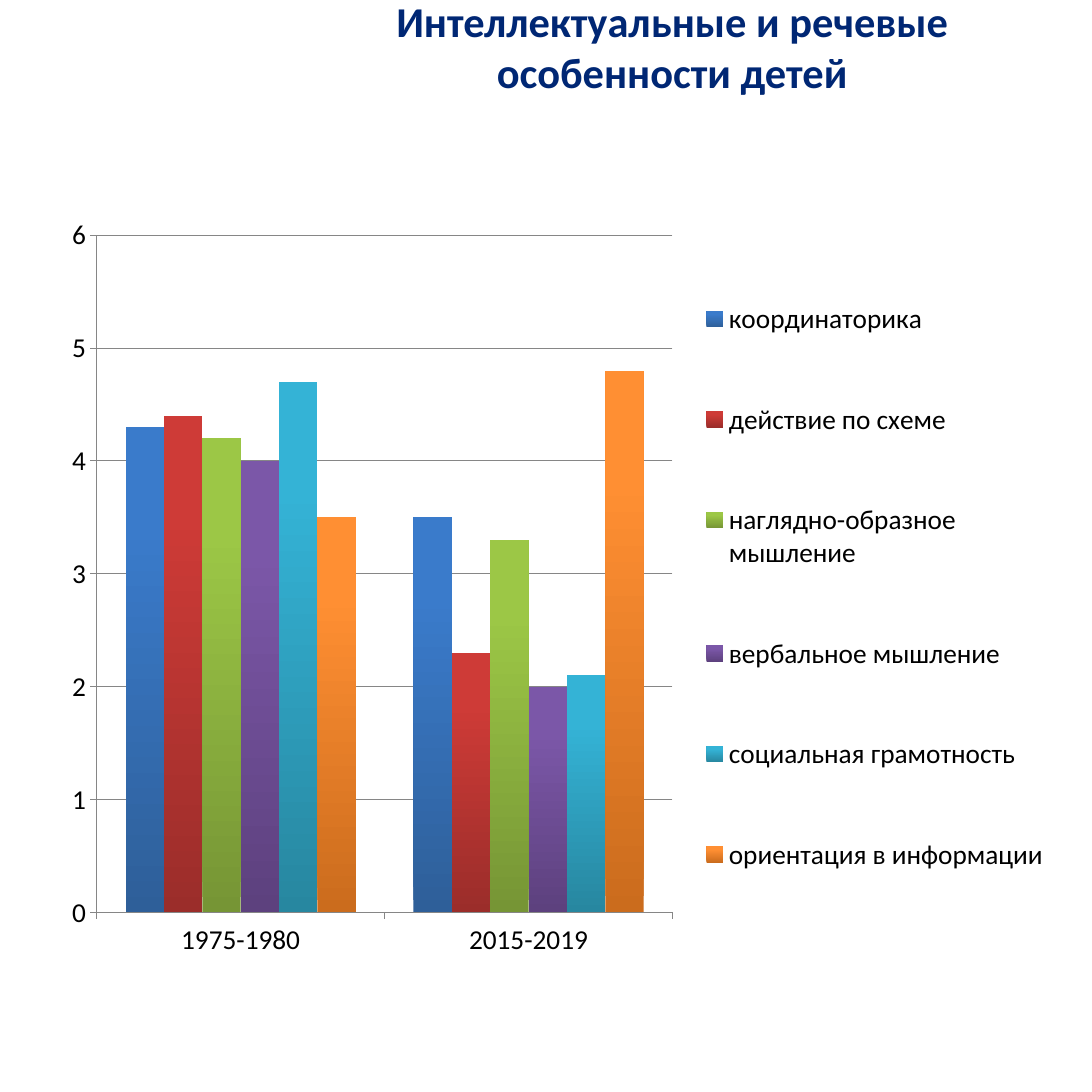
from lxml.etree import SubElement
from pptx import Presentation
from pptx.chart.data import CategoryChartData
from pptx.dml.color import RGBColor
from pptx.enum.chart import XL_CHART_TYPE, XL_LEGEND_POSITION, XL_TICK_MARK
from pptx.enum.text import MSO_ANCHOR, PP_ALIGN
from pptx.oxml.ns import qn
from pptx.util import Inches, Pt

COLORS = {"title": "002774", "text": "000000", "line": "868686", "background": "FFFFFF"}
PERIODS = ["1975-1980", "2015-2019"]
SKILLS = [
    ("координаторика", (4.3, 3.5), "2E5F99", "3A7BCB"),
    ("действие по схеме", (4.4, 2.3), "9B2D2A", "CE3B37"),
    ("наглядно-образное мышление", (4.2, 3.3), "769535", "9CC746"),
    ("вербальное мышление", (4, 2), "5D417E", "7B57A8"),
    ("социальная грамотность", (4.7, 2.1), "2787A0", "34B3D6"),
    ("ориентация в информации", (3.5, 4.8), "CB6C1D", "FF8F33"),
]


def color(name):
    return RGBColor.from_string(COLORS.get(name, name))


def write_text(frame, text, size, font, fill, bold=False, align=PP_ALIGN.LEFT):
    paragraph = frame.paragraphs[0]
    paragraph.alignment = align
    run = paragraph.add_run()
    run.text = text
    run.font.size = Pt(size)
    run.font.name = font
    run.font.bold = bold
    run.font.color.rgb = color(fill)


def set_layout(element, left, top, width, height, inner=False):
    layout = element.get_or_add_layout() if hasattr(element, "get_or_add_layout") else None
    if layout is None:
        layout = element.find(qn("c:layout"))
    if layout is None:
        layout = element.makeelement(qn("c:layout"))
        element.insert(0, layout)
    for child in list(layout):
        layout.remove(child)
    manual = SubElement(layout, qn("c:manualLayout"))
    settings = [("layoutTarget", "inner")] if inner else []
    settings += [("xMode", "edge"), ("yMode", "edge")]
    settings += [("x", left), ("y", top), ("w", width), ("h", height)]
    for tag, value in settings:
        SubElement(manual, qn(f"c:{tag}")).set("val", str(value))


class SlideBuilder:
    def __init__(self, presentation, font):
        self.font = font
        self.slide = presentation.slides.add_slide(presentation.slide_layouts[6])
        self.slide.background.fill.solid()
        self.slide.background.fill.fore_color.rgb = color("background")

    def title(self, text, left, top, width, height):
        box = self.slide.shapes.add_textbox(
            Inches(left), Inches(top), Inches(width), Inches(height))
        frame = box.text_frame
        frame.word_wrap = True
        frame.vertical_anchor = MSO_ANCHOR.MIDDLE
        write_text(frame, text, 28, self.font, "title", bold=True, align=PP_ALIGN.CENTER)

    def column_chart(self, categories, series_rows, left, top, width, height):
        data = CategoryChartData()
        data.categories = categories
        for name, values, _, _ in series_rows:
            data.add_series(name, values)
        chart = self.slide.shapes.add_chart(
            XL_CHART_TYPE.COLUMN_CLUSTERED, Inches(left), Inches(top),
            Inches(width), Inches(height), data).chart
        chart.has_title = False
        chart.font.name = self.font
        chart.font.size = Pt(18)
        chart.font.color.rgb = color("text")

        plot = chart.plots[0]
        plot.gap_width = 150
        plot.overlap = 0
        plot.vary_by_categories = False
        for series, (_, _, dark, light) in zip(plot.series, series_rows):
            self.gradient(series.format.fill, dark, light)

        self.axis(chart.category_axis)
        value_axis = chart.value_axis
        self.axis(value_axis)
        value_axis.minimum_scale = 0
        value_axis.maximum_scale = 6
        value_axis.major_unit = 1
        value_axis.has_major_gridlines = True
        self.line(value_axis.major_gridlines.format.line)

        chart.has_legend = True
        legend = chart.legend
        legend.position = XL_LEGEND_POSITION.RIGHT
        legend.include_in_layout = False
        plot_area = chart.element.find(f".//{qn('c:plotArea')}")
        set_layout(plot_area, 0.061, 0.05, 0.558, 0.828, inner=True)
        legend_element = chart.element.find(f".//{qn('c:legend')}")
        set_layout(legend_element, 0.64, 0.05, 0.35, 0.86)

    def gradient(self, fill, dark, light):
        fill.gradient()
        fill.gradient_angle = 90
        for stop, shade, position in zip(fill.gradient_stops, (dark, light), (0, 0.8)):
            stop.color.rgb = color(shade)
            stop.position = position

    def axis(self, axis):
        axis.major_tick_mark = XL_TICK_MARK.OUTSIDE
        axis.minor_tick_mark = XL_TICK_MARK.NONE
        self.line(axis.format.line)

    def line(self, line):
        line.color.rgb = color("line")
        line.width = Pt(0.75)


def main():
    presentation = Presentation()
    presentation.slide_width = presentation.slide_height = Inches(10)
    builder = SlideBuilder(presentation, "Calibri")
    builder.title("Интеллектуальные и речевые особенности детей", 2.64, -0.12, 7.03, 1.08)
    builder.column_chart(PERIODS, SKILLS, 0.31, 1.78, 9.45, 7.49)
    presentation.save("out.pptx")


if __name__ == "__main__":
    main()
